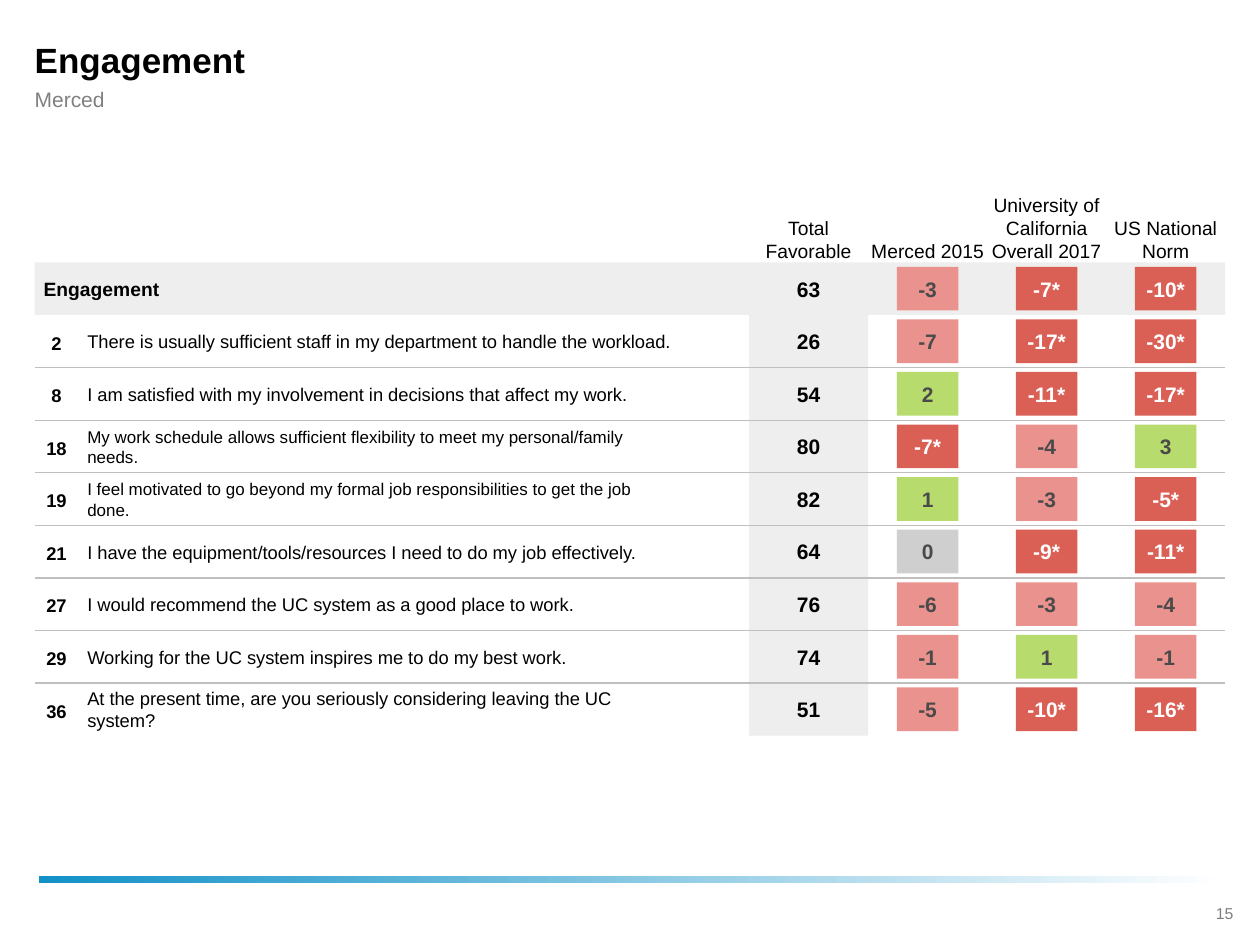
from dataclasses import dataclass

import lxml.etree
import pptx
import pptx.dml.color
import pptx.enum.shapes
import pptx.enum.text
import pptx.oxml.ns
import pptx.util

Cm = pptx.util.Cm
ALIGN = pptx.enum.text.PP_ALIGN
ANCHOR = pptx.enum.text.MSO_ANCHOR
RECTANGLE = pptx.enum.shapes.MSO_SHAPE.RECTANGLE

# Grid in centimetres
LEFT, TOP = 0.7, 5.29
WIDTH, ROW = 24.0, 1.06
SCORES_LEFT, COLUMN = 15.1, 2.4
CHIP_WIDTH, CHIP_HEIGHT = 1.24, 0.88
NUMBER_WIDTH = 0.88
HEADER_HEIGHT = 2.82

SHADE = "EEEEEE"


@dataclass(frozen=True)
class Box:
    left: float
    top: float
    width: float
    height: float

    def lengths(self) -> list[pptx.util.Length]:
        return [Cm(v) for v in (self.left, self.top, self.width, self.height)]


@dataclass(frozen=True)
class Style:
    size: float
    color: str = "000000"
    bold: bool = False
    align: ALIGN = ALIGN.LEFT
    anchor: ANCHOR = ANCHOR.MIDDLE
    insets: tuple[float, float, float, float] = (0, 0, 0, 0)
    wrap: bool = True


@dataclass(frozen=True)
class Item:
    number: str
    wording: str
    total: str
    gaps: tuple[str, str, str]
    size: float = 10.5


HEADINGS = ("Total Favorable", "Merced 2015",
            "University of California Overall 2017", "US National Norm")
SUMMARY = Item("", "Engagement", "63", ("-3", "-7*", "-10*"), 11)
QUESTIONS = (
    Item("2", "There is usually sufficient staff in my department to handle the workload.",
         "26", ("-7", "-17*", "-30*")),
    Item("8", "I am satisfied with my involvement in decisions that affect my work.",
         "54", ("2", "-11*", "-17*")),
    Item("18", "My work schedule allows sufficient flexibility to meet my personal/family needs.",
         "80", ("-7*", "-4", "3"), 9.7),
    Item("19", "I feel motivated to go beyond my formal job responsibilities to get the job done.",
         "82", ("1", "-3", "-5*"), 9.7),
    Item("21", "I have the equipment/tools/resources I need to do my job effectively.",
         "64", ("0", "-9*", "-11*")),
    Item("27", "I would recommend the UC system as a good place to work.",
         "76", ("-6", "-3", "-4")),
    Item("29", "Working for the UC system inspires me to do my best work.",
         "74", ("-1", "1", "-1")),
    Item("36", "At the present time, are you seriously considering leaving the UC system?",
         "51", ("-5", "-10*", "-16*")),
)

HEADING = Style(11, align=ALIGN.CENTER, anchor=ANCHOR.BOTTOM)
NUMBER = Style(10.5, bold=True, align=ALIGN.CENTER)
TOTAL = Style(12, bold=True, align=ALIGN.CENTER)


def rgb(color: str) -> pptx.dml.color.RGBColor:
    return pptx.dml.color.RGBColor.from_string(color)


def row_top(row: int) -> float:
    return TOP + row * ROW


def column_left(column: int) -> float:
    return SCORES_LEFT + column * COLUMN


def write(shape, wording: str, style: Style) -> None:
    frame = shape.text_frame
    frame.auto_size = pptx.enum.text.MSO_AUTO_SIZE.NONE
    frame.word_wrap = style.wrap
    frame.vertical_anchor = style.anchor
    (frame.margin_left, frame.margin_top,
     frame.margin_right, frame.margin_bottom) = [Cm(v) for v in style.insets]
    paragraph = frame.paragraphs[0]
    paragraph.alignment = style.align
    run = paragraph.add_run()
    run.text = wording
    run.font.name = "Arial"
    run.font.size = pptx.util.Pt(style.size)
    run.font.bold = style.bold
    run.font.color.rgb = rgb(style.color)


def add_text(slide, box: Box, wording: str, style: Style) -> None:
    write(slide.shapes.add_textbox(*box.lengths()), wording, style)


def add_block(slide, box: Box, color: str):
    block = slide.shapes.add_shape(RECTANGLE, *box.lengths())
    block.shadow.inherit = False
    block.fill.solid()
    block.fill.fore_color.rgb = rgb(color)
    block.line.fill.background()
    return block


def add_rule(slide, top: float) -> None:
    rule = slide.shapes.add_connector(
        pptx.enum.shapes.MSO_CONNECTOR.STRAIGHT,
        Cm(LEFT), Cm(top), Cm(LEFT + WIDTH), Cm(top))
    rule.line.color.rgb = rgb("BFBFBF")
    rule.line.width = pptx.util.Pt(0.75)
    lxml.etree.SubElement(rule.element.spPr, pptx.oxml.ns.qn("a:effectLst"))


def chip_colors(gap: str) -> tuple[str, str]:
    """Return fill and text colour; a star marks a significant gap."""
    if gap.endswith("*"):
        return "DA6056", "FFFFFF"
    value = int(gap)
    fill = "E9928E" if value < 0 else "B7DB6C" if value > 0 else "CFCFCF"
    return fill, "4A4A4A"


def add_scores(slide, row: int, item: Item) -> None:
    add_text(slide, Box(SCORES_LEFT, row_top(row) + 0.29, COLUMN, 0.48), item.total, TOTAL)
    for column, gap in enumerate(item.gaps, start=1):
        fill, color = chip_colors(gap)
        box = Box(column_left(column) + (COLUMN - CHIP_WIDTH) / 2,
                  row_top(row) + (ROW - CHIP_HEIGHT) / 2, CHIP_WIDTH, CHIP_HEIGHT)
        write(add_block(slide, box, fill), gap,
              Style(12, color, True, ALIGN.CENTER, insets=(0, 0.13, 0, 0.13), wrap=False))


def add_question(slide, row: int, item: Item) -> None:
    top = row_top(row)
    add_text(slide, Box(LEFT, top + 0.28, NUMBER_WIDTH, 0.56), item.number, NUMBER)
    add_text(slide, Box(LEFT + NUMBER_WIDTH, top + 0.13, 12.96, 0.81), item.wording,
             Style(item.size, insets=(0.18, 0, 0.88, 0)))
    add_scores(slide, row, item)
    if row < len(QUESTIONS):
        add_rule(slide, top + ROW)


def main() -> None:
    deck = pptx.Presentation()
    deck.slide_width, deck.slide_height = Cm(25.4), Cm(19.05)
    slide = deck.slides.add_slide(deck.slide_layouts[5])

    # Title and subtitle
    title = slide.shapes.title
    title.left, title.top, title.width, title.height = Box(LEFT, 0.71, WIDTH, 0.97).lengths()
    write(title, "Engagement", Style(20, bold=True, insets=(0, 0, 0.88, 0)))
    add_text(slide, Box(LEFT, 1.74, WIDTH, 0.53), "Merced",
             Style(12, "808080", insets=(0, 0, 0.88, 0)))

    # Footer band and page number
    band = add_block(slide, Box(0.78, 17.67, 23.92, 0.13), "FFFFFF")
    band.fill.gradient()
    band.fill.gradient_angle = 0
    for stop, color in zip(band.fill.gradient_stops, ("1291C7", "FFFFFF")):
        stop.color.rgb = rgb(color)
    add_text(slide, Box(24.03, 18.09, 1.32, 0.64), "15",
             Style(9, "7F7F7F", align=ALIGN.CENTER))

    # Shading of the summary row and the total column
    add_block(slide, Box(LEFT, TOP, WIDTH, ROW), SHADE)
    for row in range(1, len(QUESTIONS) + 1):
        add_block(slide, Box(SCORES_LEFT, row_top(row), COLUMN, ROW), SHADE)

    # Column headings
    for column, heading in enumerate(HEADINGS):
        box = Box(column_left(column), TOP - HEADER_HEIGHT, COLUMN, HEADER_HEIGHT)
        add_text(slide, box, heading, HEADING)

    # Summary and question rows
    add_text(slide, Box(LEFT, TOP, SCORES_LEFT - LEFT, ROW), SUMMARY.wording,
             Style(SUMMARY.size, bold=True, insets=(0.18, 0, 0.18, 0)))
    add_scores(slide, 0, SUMMARY)
    for row, question in enumerate(QUESTIONS, start=1):
        add_question(slide, row, question)

    deck.save("out.pptx")


if __name__ == "__main__":
    main()
